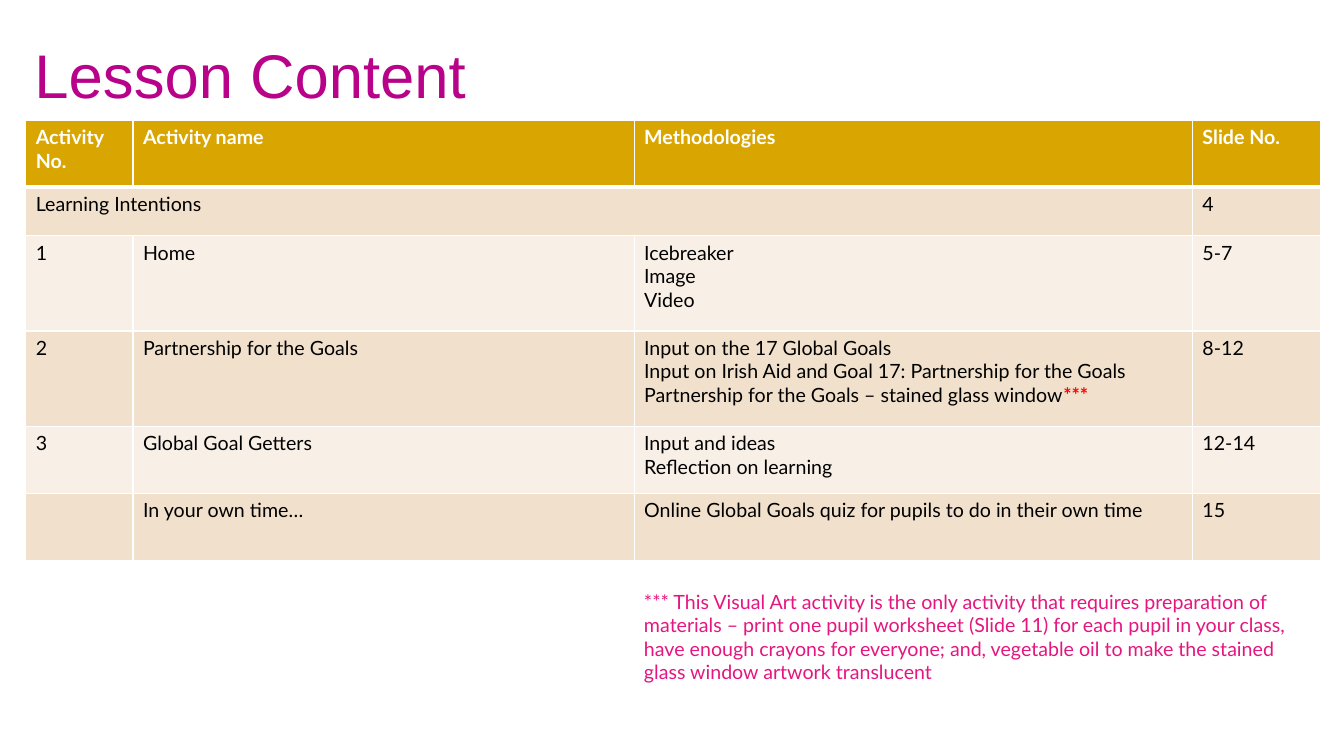
from lxml import etree
from pptx import Presentation
from pptx import util as u
from pptx.dml.color import RGBColor
from pptx.enum import text
from pptx.oxml import ns

COLORS = {
    "title": "B70289",
    "header": "D9A500",
    "dark_band": "F1E1CC",
    "light_band": "F8F0E7",
    "white": "FFFFFF",
    "body": "000000",
    "stars": "FF0000",
    "note": "E5167F",
}
STARS = "***"


def style_font(font, name, size, color, bold=False):
    font.name = name
    font.size = u.Pt(size)
    font.bold = bold
    font.color.rgb = RGBColor.from_string(COLORS[color])


def add_border(cell, side, width):
    ln = etree.SubElement(cell._tc.get_or_add_tcPr(), ns.qn("a:" + side), w=str(u.Pt(width)))
    fill = etree.SubElement(ln, ns.qn("a:solidFill"))
    etree.SubElement(fill, ns.qn("a:srgbClr"), val=COLORS["white"])


prs = Presentation()
prs.slide_width = u.Cm(33.87)
prs.slide_height = u.Cm(19.05)
s = prs.slides.add_slide(prs.slide_layouts[6])

rows = [
    ("Activity No.", "Activity name", "Methodologies", "Slide No."),
    ("Learning Intentions", "", "", "4"),
    ("1", "Home", "Icebreaker\nImage\nVideo", "5-7"),
    (
        "2",
        "Partnership for the Goals",
        "Input on the 17 Global Goals\n"
        "Input on Irish Aid and Goal 17: Partnership for the Goals\n"
        "Partnership for the Goals – stained glass window***",
        "8-12",
    ),
    ("3", "Global Goal Getters", "Input and ideas\nReflection on learning", "12-14"),
    ("", "In your own time…", "Online Global Goals quiz for pupils to do in their own time", "15"),
]
col_widths = [2.7, 12.63, 14.07, 3.23]
row_heights = [1.69, 1.22, 2.4, 2.4, 1.69, 1.69]

table = s.shapes.add_table(
    len(rows), len(col_widths), u.Cm(0.65), u.Cm(3.03),
    u.Cm(sum(col_widths)), u.Cm(sum(row_heights)),
).table
for column, width in zip(table.columns, col_widths):
    column.width = u.Cm(width)
for row, height in zip(table.rows, row_heights):
    row.height = u.Cm(height)
table.cell(1, 0).merge(table.cell(1, 2))

for i, row in enumerate(rows):
    is_header = i == 0
    band = "header" if is_header else "dark_band" if i % 2 else "light_band"
    for j, content in enumerate(row):
        cell = table.cell(i, j)
        for side in ("lnL", "lnR", "lnT", "lnB"):
            thick = (is_header and side == "lnB") or (i == 1 and side == "lnT")
            add_border(cell, side, 3 if thick else 1)
        cell.fill.solid()
        cell.fill.fore_color.rgb = RGBColor.from_string(COLORS[band])
        cell.text = content.removesuffix(STARS)
        for p in cell.text_frame.paragraphs:
            style_font(p.font, "Lato", 14, "white" if is_header else "body", is_header)
        if content.endswith(STARS):
            r = p.add_run()
            r.text = STARS
            style_font(r.font, "Lato", 14, "stars", True)

note = s.shapes.add_textbox(u.Cm(15.98), u.Cm(14.73), u.Cm(17.25), u.Cm(2.64))
tf = note.text_frame
tf.word_wrap = True
tf.auto_size = text.MSO_AUTO_SIZE.SHAPE_TO_FIT_TEXT
p = tf.paragraphs[0]
p.text = (
    "*** This Visual Art activity is the only activity that requires preparation of materials "
    "– print one pupil worksheet (Slide 11) for each pupil in your class, have enough crayons "
    "for everyone; and, vegetable oil to make the stained glass window artwork translucent"
)
style_font(p.font, "Lato", 14, "note")

title = s.shapes.add_textbox(u.Cm(0.62), u.Cm(0.15), u.Cm(29.21), u.Cm(3.68))
tf = title.text_frame
tf.word_wrap = True
tf.vertical_anchor = text.MSO_ANCHOR.MIDDLE
p = tf.paragraphs[0]
p.text = "Lesson Content"
p.line_spacing = 0.9
style_font(p.font, "Arial", 44, "title")

prs.save("out.pptx")
